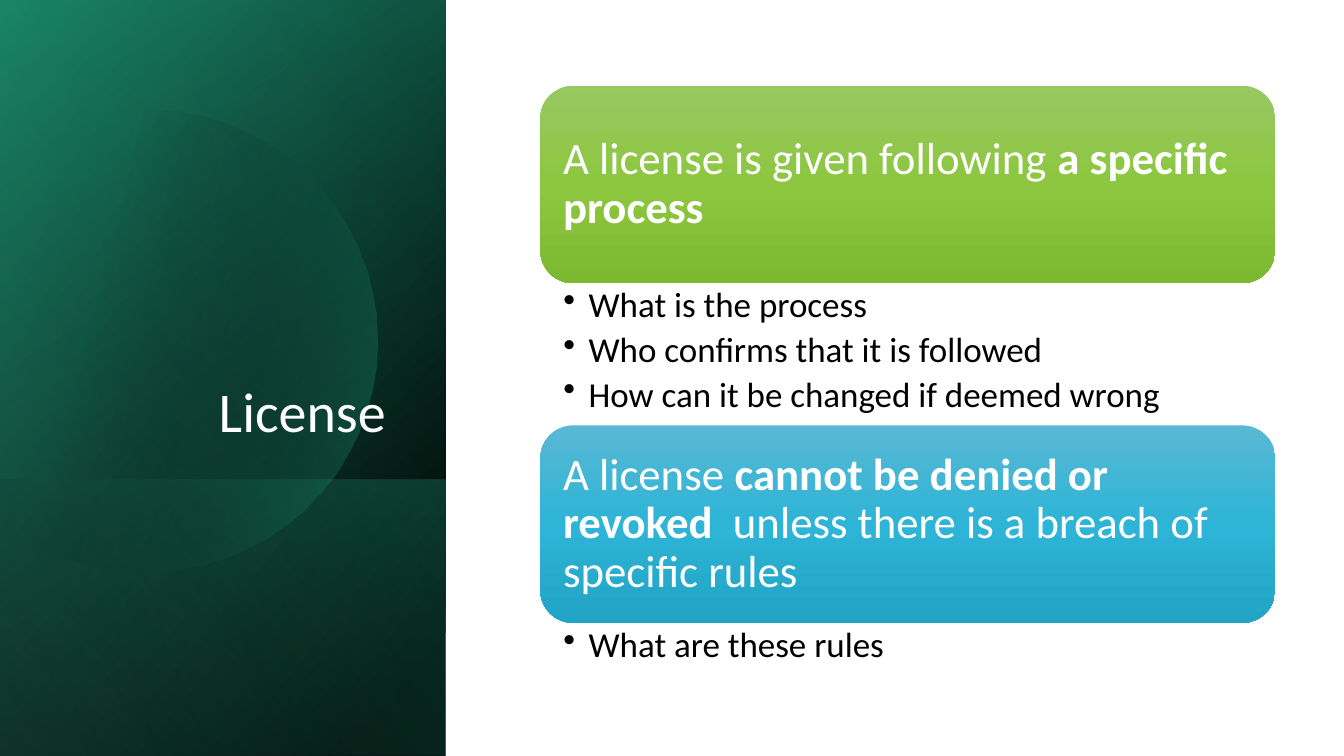
from math import acos, cos, pi, sin

from lxml import etree
from pptx import Presentation, util as u
from pptx.dml.color import RGBColor
from pptx.enum import shapes as kinds, text as txt
from pptx.oxml.ns import qn

PX = 9144  # 100 px to the inch
THEME = {
    "font": "Calibri", "light": "FFFFFF", "dark": "000000",
    "title": 40, "statement": 32, "detail": 25,
    "lime": [(0, "98C862", 100), (50, "8CC73F", 100), (100, "7DB831", 100)],
    "azure": [(0, "59B8D4", 100), (50, "2EB4D6", 100), (100, "21A4C6", 100)],
    "base": [(8, "000000", 100), (100, "16745A", 100)],
    "glow": [(0, "000000", 0), (99, "1D9A78", 46)],
    "band": [(2, "1D9A78", 29), (100, "000000", 30)],
    "disc": [(29, "000000", 0), (100, "1D9A78", 43)],
    "sheen": [(0, "000000", 0), (99, "5AE0BB", 11)],
}


def paint(shape, stops, angle):
    """Fill with a gradient of (position %, colour, opacity %), angle clockwise."""
    shape.shadow.inherit = False
    shape.line.fill.background()
    shape.fill.gradient()
    shape.fill.gradient_angle = (360 - angle) % 360
    stop_list = shape._element.spPr.find(qn("a:gradFill")).find(qn("a:gsLst"))
    for old in list(stop_list):
        stop_list.remove(old)
    for position, color, opacity in stops:
        stop = etree.SubElement(stop_list, qn("a:gs"), pos=str(position * 1000))
        rgb = etree.SubElement(stop, qn("a:srgbClr"), val=color)
        if opacity < 100:
            etree.SubElement(rgb, qn("a:alpha"), val=str(opacity * 1000))


def write(shape, paragraphs, size, color, frame_format, paragraph_format):
    """Write paragraphs, each a list of (text, bold) runs."""
    frame = shape.text_frame
    for key, value in {"word_wrap": True, **frame_format}.items():
        setattr(frame, key, value)
    for number, runs in enumerate(paragraphs):
        paragraph = frame.add_paragraph() if number else frame.paragraphs[0]
        for key, value in {"line_spacing": 0.9, **paragraph_format}.items():
            setattr(paragraph, key, value)
        for words, bold in runs:
            run = paragraph.add_run()
            run.text = words
            run.font.color.rgb = RGBColor.from_string(THEME[color])
            for key, value in {"name": THEME["font"], "bold": bold,
                               "size": u.Pt(THEME[size])}.items():
                setattr(run.font, key, value)


deck = Presentation()
deck.slide_width, deck.slide_height = u.Inches(13.333), 750 * PX
slide = deck.slides.add_slide(deck.slide_layouts[6])
canvas = slide.shapes

# Green side panel: layers turned a quarter and mirrored, with a disc below the last
PANEL_W, PANEL_H = 442, 750
DISC_X, DISC_Y, DISC_R = 145, 338, 229
for layer, height, angle in [("base", 750, 50), ("glow", 750, 30), ("band", 274, 130),
                             ("disc", None, 14), ("sheen", 750, 120)]:
    if layer == "disc":
        # Circle cut off by the slide's left edge
        reach = acos(-DISC_X / DISC_R)
        steps = 120
        rim = [(round(DISC_X + DISC_R * cos(a), 2), round(DISC_Y + DISC_R * sin(a), 2))
               for a in (reach * (2 * i / steps - 1) for i in range(steps + 1))]
        outline = canvas.build_freeform(*rim[0], scale=PX)
        outline.add_line_segments(rim[1:], close=True)
        paint(outline.convert_to_shape(), THEME[layer], angle)
        continue
    left = (PANEL_W - height) // 2
    top = PANEL_H - (height + PANEL_W) // 2
    sheet = canvas.add_shape(kinds.MSO_SHAPE.RECTANGLE, left * PX, top * PX,
                             height * PX, PANEL_W * PX)
    sheet.rotation = 90
    sheet._element.spPr.find(qn("a:xfrm")).set("flipH", "1")
    paint(sheet, THEME[layer], angle)

# Title
title = canvas.add_textbox(64 * PX, 184 * PX, 341 * PX, 262 * PX)
write(title, [[("License ", False)]], "title", "light",
      {"vertical_anchor": txt.MSO_ANCHOR.BOTTOM}, {"alignment": txt.PP_ALIGN.RIGHT})

# Statements, each followed by its questions
LEFT, WIDTH, CARD_H = 536, 729, 196
sections = [
    ("lime", 141,
     [("A license is given following ", False), ("a specific process", True)],
     ["What is the process", "Who confirms that it is followed",
      "How can it be changed if deemed wrong"]),
    ("azure", 58,
     [("A license ", False), ("cannot be denied or  revoked ", True),
      (" unless there is a breach of specific rules", False)],
     ["What are these rules"]),
]
card_insets = {f"margin_{side}": 13 * PX for side in ("left", "top", "right", "bottom")}
list_insets = {"margin_left": 23 * PX, "margin_right": 25 * PX,
               "margin_top": 4 * PX, "margin_bottom": 4 * PX}
top = 85
for tint, questions_h, statement, questions in sections:
    card = canvas.add_shape(kinds.MSO_SHAPE.ROUNDED_RECTANGLE, LEFT * PX, top * PX,
                            WIDTH * PX, CARD_H * PX)
    paint(card, THEME[tint], 90)
    write(card, [statement], "statement", "light",
          {"vertical_anchor": txt.MSO_ANCHOR.MIDDLE, **card_insets},
          {"alignment": txt.PP_ALIGN.LEFT})
    top += CARD_H

    details = canvas.add_textbox(LEFT * PX, top * PX, WIDTH * PX, questions_h * PX)
    write(details, [[(question, False)] for question in questions], "detail", "dark",
          list_insets, {"space_after": u.Pt(5)})
    for paragraph in details.text_frame.paragraphs:
        bullet = paragraph._p.get_or_add_pPr()
        bullet.set("marL", str(25 * PX))
        bullet.set("indent", str(-25 * PX))
        etree.SubElement(bullet, qn("a:buChar"), char="•")
    top += questions_h

deck.save("out.pptx")
